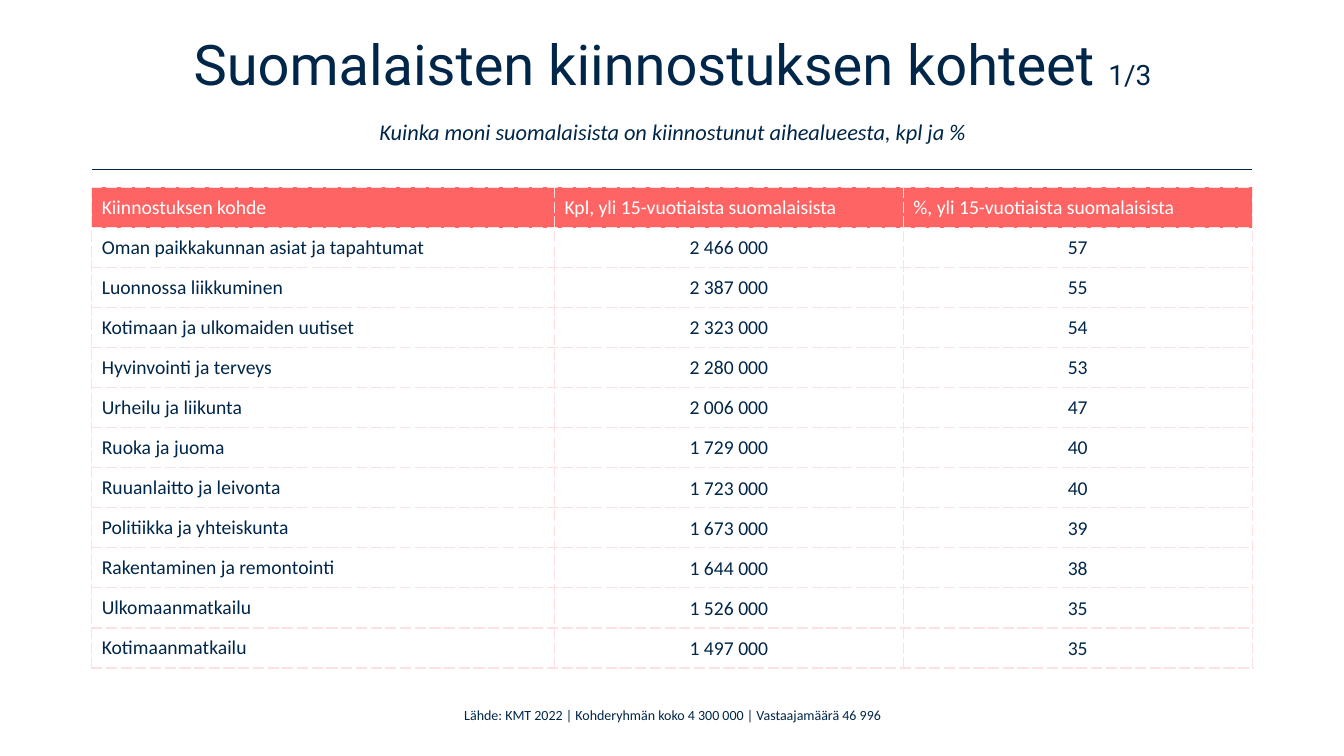
from lxml import etree
from pptx import Presentation
from pptx.dml.color import RGBColor
from pptx.enum.shapes import MSO_CONNECTOR
from pptx.enum.text import MSO_ANCHOR, PP_ALIGN
from pptx.oxml.ns import qn
from pptx.util import Inches, Pt

CENTER = PP_ALIGN.CENTER
LEFT = PP_ALIGN.LEFT
MIDDLE = MSO_ANCHOR.MIDDLE
STRAIGHT = MSO_CONNECTOR.STRAIGHT

COLORS = {"navy": "002649", "coral": "FF6464", "blush": "FFE0E0", "white": "FFFFFF"}
HEADING_FONT = "Roboto"
BODY_FONT = "Calibri"

HEADERS = (
    "Kiinnostuksen kohde",
    "Kpl, yli 15-vuotiaista suomalaisista",
    "%, yli 15-vuotiaista suomalaisista",
)
INTERESTS = [
    ("Oman paikkakunnan asiat ja tapahtumat", "2 466 000", "57"),
    ("Luonnossa liikkuminen", "2 387 000", "55"),
    ("Kotimaan ja ulkomaiden uutiset", "2 323 000", "54"),
    ("Hyvinvointi ja terveys", "2 280 000", "53"),
    ("Urheilu ja liikunta", "2 006 000", "47"),
    ("Ruoka ja juoma", "1 729 000", "40"),
    ("Ruuanlaitto ja leivonta", "1 723 000", "40"),
    ("Politiikka ja yhteiskunta", "1 673 000", "39"),
    ("Rakentaminen ja remontointi", "1 644 000", "38"),
    ("Ulkomaanmatkailu", "1 526 000", "35"),
    ("Kotimaanmatkailu", "1 497 000", "35"),
]


class SlideBuilder:
    def __init__(self, prs):
        self.slide = prs.slides.add_slide(prs.slide_layouts[5])

    def color(self, name):
        return RGBColor.from_string(COLORS[name])

    def style(self, r, size, color="navy", font=BODY_FONT, italic=False):
        r.font.size = Pt(size)
        r.font.name = font
        r.font.bold = False
        r.font.italic = italic
        r.font.color.rgb = self.color(color)

    def title(self, heading, page, subtitle, x, y, w, h):
        sp = self.slide.shapes.title
        sp.left, sp.top, sp.width, sp.height = map(Inches, (x, y, w, h))
        tf = sp.text_frame
        tf.word_wrap = True
        tf.vertical_anchor = MIDDLE
        p = tf.paragraphs[0]
        p.alignment = CENTER
        p.line_spacing = Pt(35)
        p.space_after = Pt(18)
        for text, size, font in ((heading, 40, HEADING_FONT), (page, 20, HEADING_FONT)):
            r = p.add_run()
            r.text = text
            self.style(r, size, font=font)
        p.add_line_break()
        r = p.add_run()
        r.text = subtitle
        self.style(r, 16, italic=True)

    def text(self, text, size, x, y, w, h):
        sp = self.slide.shapes.add_textbox(*map(Inches, (x, y, w, h)))
        tf = sp.text_frame
        tf.word_wrap = True
        p = tf.paragraphs[0]
        p.text = text
        p.alignment = CENTER
        self.style(p.runs[0], size)

    def rule(self, x1, x2, y):
        line = self.slide.shapes.add_connector(
            STRAIGHT, Inches(x1), Inches(y), Inches(x2), Inches(y)
        )
        line.line.color.rgb = self.color("navy")
        line.line.width = Pt(1)
        etree.SubElement(line._element.spPr, qn("a:effectLst"))

    def borders(self, cell):
        tcPr = cell._tc.get_or_add_tcPr()
        for side in ("lnL", "lnR", "lnT", "lnB"):
            ln = etree.SubElement(tcPr, qn(f"a:{side}"), w=str(Pt(1)))
            fill = etree.SubElement(ln, qn("a:solidFill"))
            etree.SubElement(fill, qn("a:srgbClr"), val=COLORS["blush"])
            etree.SubElement(ln, qn("a:prstDash"), val="sysDash")

    def cell(self, cell, text, header, numeric):
        self.borders(cell)
        if header:
            cell.fill.solid()
            cell.fill.fore_color.rgb = self.color("coral")
        else:
            cell.fill.background()
        cell.vertical_anchor = MIDDLE
        if numeric:
            cell.margin_left = cell.margin_right = cell.margin_top = Inches(0.01)
            cell.margin_bottom = 0
        p = cell.text_frame.paragraphs[0]
        p.text = text
        p.alignment = CENTER if numeric else LEFT
        self.style(p.runs[0], 14, "white" if header else "navy")

    def table(self, rows, widths, x, y, h):
        table = self.slide.shapes.add_table(
            len(rows), len(widths), Inches(x), Inches(y), Inches(sum(widths)), Inches(h)
        ).table
        table.horz_banding = False
        for column, width in zip(table.columns, widths):
            column.width = Inches(width)
        for i, row in enumerate(rows):
            table.rows[i].height = Inches(h / len(rows))
            for j, text in enumerate(row):
                self.cell(table.cell(i, j), text, i == 0, i > 0 and j > 0)


def main():
    prs = Presentation()
    prs.slide_width = Inches(13.33)
    prs.slide_height = Inches(7.5)
    s = SlideBuilder(prs)
    s.title(
        "Suomalaisten kiinnostuksen kohteet ",
        "1/3",
        "Kuinka moni suomalaisista on kiinnostunut aihealueesta, kpl ja %",
        0.92, 0.42, 11.5, 1.07,
    )
    s.text(
        "Lähde: KMT 2022 | Kohderyhmän koko 4 300 000 | Vastaajamäärä 46 996",
        10, 4.08, 6.96, 5.18, 0.27,
    )
    s.rule(0.91, 12.42, 1.68)
    s.table([HEADERS] + INTERESTS, (4.59, 3.46, 3.46), 0.91, 1.86, 4.77)
    prs.save("out.pptx")


if __name__ == "__main__":
    main()
